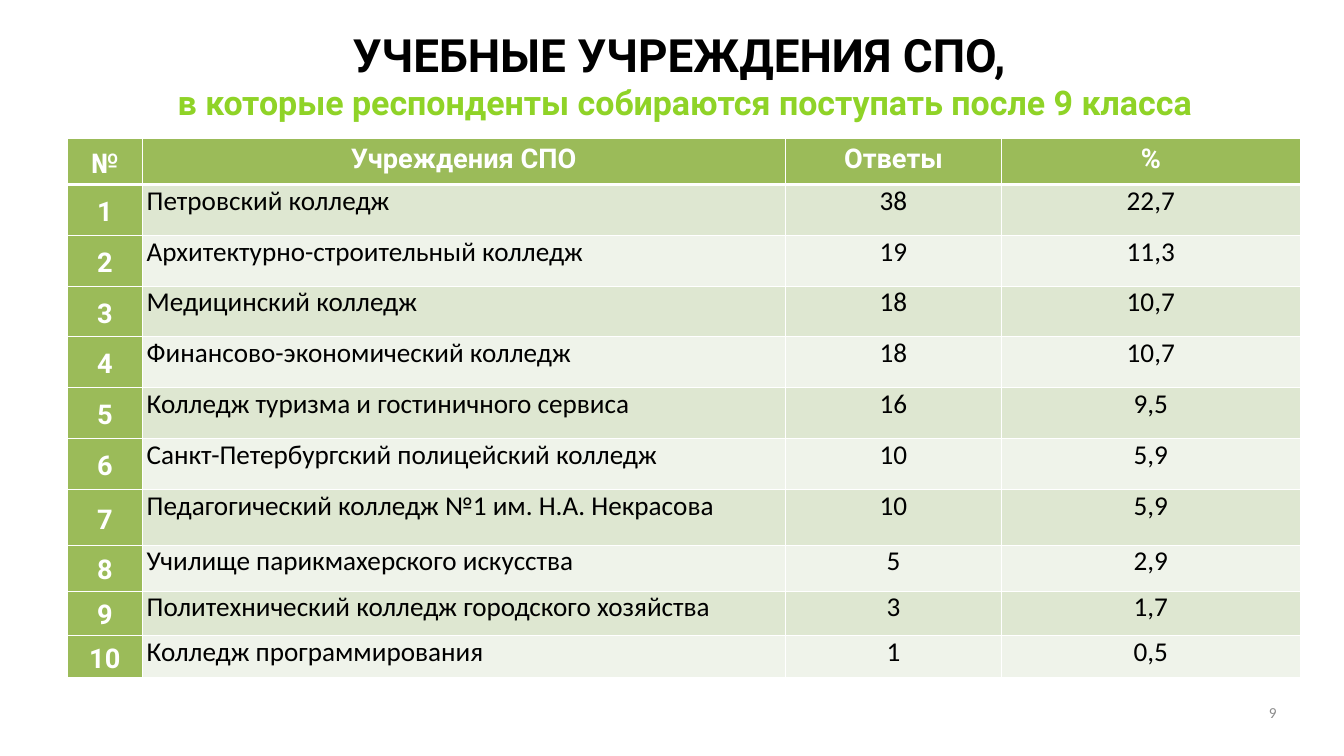
from lxml import etree
from pptx import Presentation
from pptx.dml.color import RGBColor
from pptx.enum.text import MSO_ANCHOR, PP_ALIGN
from pptx.oxml.ns import qn
from pptx.util import Inches, Pt

LEFT, CENTER, RIGHT = PP_ALIGN.LEFT, PP_ALIGN.CENTER, PP_ALIGN.RIGHT
TOP, MIDDLE = MSO_ANCHOR.TOP, MSO_ANCHOR.MIDDLE

BLACK, WHITE, GRAY = "000000", "FFFFFF", "8C8C8C"
GREEN, LIME = "9BBB59", "8FD327"
BANDS = ("DEE7D1", "EFF3EA")

COL_WIDTHS = (1.23, 10.52, 3.54, 4.88)
ROW_HEIGHTS = (0.75, *[0.83] * 5, 0.84, 0.91, 0.75, 0.73, 0.68)
HEADERS = ("№", "Учреждения СПО", "Ответы", "%")
COLLEGES = (
    ("Петровский колледж", "38", "22,7"),
    ("Архитектурно-строительный колледж", "19", "11,3"),
    ("Медицинский колледж", "18", "10,7"),
    ("Финансово-экономический колледж", "18", "10,7"),
    ("Колледж туризма и гостиничного сервиса", "16", "9,5"),
    ("Санкт-Петербургский полицейский колледж", "10", "5,9"),
    ("Педагогический колледж №1 им. Н.А. Некрасова", "10", "5,9"),
    ("Училище парикмахерского искусства", "5", "2,9"),
    ("Политехнический колледж городского хозяйства", "3", "1,7"),
    ("Колледж программирования", "1", "0,5"),
)


def rgb(color):
    return RGBColor.from_string(color)


def add_run(p, text, size, color, font, bold=False):
    r = p.add_run()
    r.text = text
    r.font.size = Pt(size)
    r.font.name = font
    r.font.bold = bold
    r.font.color.rgb = rgb(color)


def add_text_box(s, left, top, width, height, align):
    """Add an empty box without margins and return its first paragraph."""
    sp = s.shapes.add_textbox(Inches(left), Inches(top), Inches(width), Inches(height))
    tf = sp.text_frame
    tf.word_wrap = True
    tf.margin_left = tf.margin_right = tf.margin_top = tf.margin_bottom = 0
    p = tf.paragraphs[0]
    p.alignment = align
    return p


def set_borders(cell, **widths):
    """Draw white borders; widths in points are keyed L, R, T, B."""
    tc_pr = cell._tc.get_or_add_tcPr()
    for side, width in widths.items():
        ln = etree.SubElement(tc_pr, qn(f"a:ln{side}"), w=str(Pt(width)))
        fill = etree.SubElement(ln, qn("a:solidFill"))
        etree.SubElement(fill, qn("a:srgbClr"), val=WHITE)


def fill_cell(cell, text, row, col):
    is_header = row == 0
    is_green = is_header or col == 0
    set_borders(cell, L=1, R=1, T=3 if row == 1 else 1, B=3 if is_header else 1)
    cell.fill.solid()
    cell.fill.fore_color.rgb = rgb(GREEN if is_green else BANDS[(row - 1) % 2])
    cell.margin_left = cell.margin_right = Inches(0.04 if is_green else 0.07)
    cell.margin_top = cell.margin_bottom = 0
    cell.vertical_anchor = MIDDLE if col == 0 else TOP
    p = cell.text_frame.paragraphs[0]
    p.alignment = LEFT if col == 1 and not is_header else CENTER
    if is_green:
        p.line_spacing = 1.15
        add_run(p, text, 32, WHITE, "Roboto", bold=True)
    else:
        add_run(p, text, 32, BLACK, "Calibri")


def add_college_table(s):
    rows = [HEADERS] + [(str(n), *college) for n, college in enumerate(COLLEGES, 1)]
    table = s.shapes.add_table(
        len(rows), len(HEADERS), Inches(1.1), Inches(2.27),
        Inches(sum(COL_WIDTHS)), Inches(sum(ROW_HEIGHTS))).table
    for column, width in zip(table.columns, COL_WIDTHS):
        column.width = Inches(width)
    for row, height in zip(table.rows, ROW_HEIGHTS):
        row.height = Inches(height)
    for i, values in enumerate(rows):
        for j, text in enumerate(values):
            fill_cell(table.cell(i, j), text, i, j)


def main():
    prs = Presentation()
    prs.slide_width, prs.slide_height = Inches(21.99), Inches(12.37)
    s = prs.slides.add_slide(prs.slide_layouts[6])

    p = add_text_box(s, 1.41, 0.43, 19.59, 1.58, CENTER)
    add_run(p, "УЧЕБНЫЕ УЧРЕЖДЕНИЯ СПО, ", 54, BLACK, "Roboto", bold=True)
    p.add_line_break()
    add_run(p, "в которые респонденты собираются поступать после 9 класса",
            40, LIME, "Roboto", bold=True)

    add_college_table(s)

    p = add_text_box(s, 15.83, 11.5, 5.06, 0.62, RIGHT)
    add_run(p, "9", 18, GRAY, "Calibri")

    prs.save("out.pptx")


if __name__ == "__main__":
    main()
